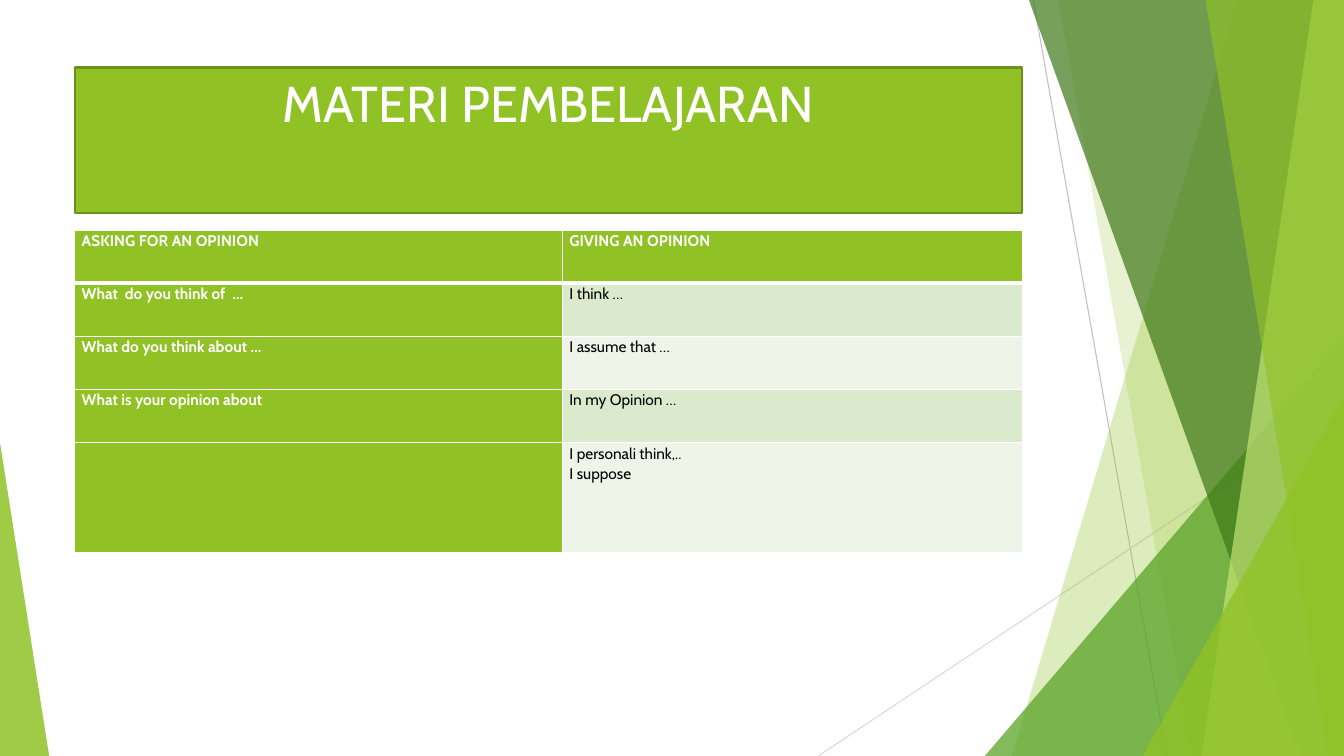
from lxml import etree
from pptx import Presentation
from pptx.dml.color import RGBColor
from pptx.enum.shapes import MSO_CONNECTOR, MSO_SHAPE
from pptx.enum.text import MSO_ANCHOR, PP_ALIGN
from pptx.oxml.ns import qn
from pptx.util import Cm, Pt

STRAIGHT = MSO_CONNECTOR.STRAIGHT
TRIANGLE = MSO_SHAPE.ISOSCELES_TRIANGLE
TOP = MSO_ANCHOR.TOP
CENTER = PP_ALIGN.CENTER

SLIDE_W, SLIDE_H = 33.87, 19.05
FONT = "Cabin"
GREEN, WHITE, BLACK = "90C226", "FFFFFF", "000000"
ROW_TINTS = ("DBE9CD", "EEF4E8")

OPINIONS = [
    (["ASKING FOR AN OPINION"], ["GIVING AN OPINION"]),
    (["What  do you think of  …"], ["I think …"]),
    (["What do you think about …"], ["I assume that …"]),
    (["What is your opinion about"], ["In my Opinion …"]),
    ([], ["I personali think,..", "I suppose"]),
]


def rgb(color):
    return RGBColor.from_string(color)


def add_run(paragraph, text, size, color, bold=False):
    run = paragraph.add_run()
    run.text = text
    run.font.name = FONT
    run.font.size = Pt(size)
    run.font.bold = bold
    run.font.color.rgb = rgb(color)


def paint(shape, color, opacity):
    shape.shadow.inherit = False
    shape.line.fill.background()
    shape.fill.solid()
    shape.fill.fore_color.rgb = rgb(color)
    srgb = shape.fill._xPr.find(qn("a:solidFill"))[0]
    etree.SubElement(srgb, qn("a:alpha"), val=str(opacity * 1000))


def add_thin_line(slide, start, end, color):
    line = slide.shapes.add_connector(STRAIGHT, *map(Cm, start + end))
    line.line.color.rgb = rgb(color)
    line.line.width = Pt(0.75)
    etree.SubElement(line._element.spPr, qn("a:effectLst"))


def add_triangle(slide, left, top, width, height, apex, color, opacity):
    triangle = slide.shapes.add_shape(
        TRIANGLE, Cm(left), Cm(top), Cm(width), Cm(height))
    triangle.adjustments[0] = apex
    paint(triangle, color, opacity)


def add_band(slide, right, bottom, top_width, bottom_width, color, opacity):
    """Fill from a slanted left edge to the right edge, over the full height."""
    corners = [(right - top_width, 0), (right, 0),
               (right, bottom), (right - bottom_width, bottom)]
    points = [(Cm(x), Cm(y)) for x, y in corners]
    builder = slide.shapes.build_freeform(*points[0])
    builder.add_line_segments(points[1:], close=True)
    paint(builder.convert_to_shape(), color, opacity)


def add_facets(slide, right, bottom):
    # Thin crossing lines
    add_thin_line(slide, (right - 7.83, 0), (right - 4.46, bottom), "BFBFBF")
    add_thin_line(slide, (right, bottom - 8.81), (right - 13.25, bottom), "D9D9D9")

    # Translucent bands and corner triangles, back to front
    add_band(slide, right, bottom, 2.68, 8.37, GREEN, 30)
    add_band(slide, right, bottom, 7.2, 3.82, GREEN, 20)
    add_triangle(slide, right - 9.05, bottom - 10.59, 9.05, 10.59, 1, "54A021", 72)
    add_band(slide, right, bottom, 7.94, 1.08, "3F7819", 70)
    add_band(slide, right, bottom, 0.77, 3.59, "C0E474", 70)
    add_band(slide, right, bottom, 3.49, 0.39, GREEN, 65)
    add_triangle(slide, right - 5.07, bottom - 9.07, 5.07, 9.07, 1, GREEN, 80)

    # Sliver at the left edge
    add_triangle(slide, 0, bottom - 7.9, 1.24, 7.9, 0, GREEN, 85)


def add_title(slide, left, top, width, height):
    title = slide.shapes.title
    title.left, title.top = Cm(left), Cm(top)
    title.width, title.height = Cm(width), Cm(height)
    title.fill.solid()
    title.fill.fore_color.rgb = rgb(GREEN)
    title.line.color.rgb = rgb("6B901C")
    title.line.width = Pt(1.5)
    frame = title.text_frame
    frame.word_wrap = True
    frame.vertical_anchor = TOP
    frame.paragraphs[0].alignment = CENTER
    add_run(frame.paragraphs[0], "MATERI PEMBELAJARAN", 36, WHITE)


def add_borders(cell, top_width, bottom_width):
    properties = cell._tc.get_or_add_tcPr()
    for side, width in zip("LRTB", (1, 1, top_width, bottom_width)):
        border = etree.SubElement(properties, qn("a:ln" + side), w=str(Pt(width)))
        fill = etree.SubElement(border, qn("a:solidFill"))
        etree.SubElement(fill, qn("a:srgbClr"), val=WHITE)


def fill_cell(cell, lines, background, color, bold):
    cell.fill.solid()
    cell.fill.fore_color.rgb = rgb(background)
    cell.margin_left = cell.margin_right = Cm(0.18)
    cell.margin_top = cell.margin_bottom = 0
    frame = cell.text_frame
    for index, line in enumerate(lines):
        paragraph = frame.add_paragraph() if index else frame.paragraphs[0]
        paragraph.line_spacing = 1.07
        add_run(paragraph, line, 11, color, bold)


def add_opinion_table(slide, left, top, width, height):
    table = slide.shapes.add_table(
        len(OPINIONS), 2, Cm(left), Cm(top), Cm(width), Cm(height)).table
    asking_width, row_height = 12.29, 1.34
    table.columns[0].width = Cm(asking_width)
    table.columns[1].width = Cm(width - asking_width)
    last = len(OPINIONS) - 1

    for r, phrases in enumerate(OPINIONS):
        table.rows[r].height = Cm(height - last * row_height if r == last else row_height)
        for c, lines in enumerate(phrases):
            cell = table.cell(r, c)
            add_borders(cell, 3 if r == 1 else 1, 3 if r == 0 else 1)
            if r == 0 or c == 0:
                fill_cell(cell, lines, GREEN, WHITE, True)
            else:
                fill_cell(cell, lines, ROW_TINTS[(r - 1) % 2], BLACK, False)


def main():
    deck = Presentation()
    deck.slide_width, deck.slide_height = Cm(SLIDE_W), Cm(SLIDE_H)
    slide = deck.slides.add_slide(deck.slide_layouts[5])
    add_facets(slide, SLIDE_W, SLIDE_H)
    add_title(slide, 1.88, 1.7, 23.88, 3.66)
    add_opinion_table(slide, 1.88, 5.8, 23.88, 8.12)
    deck.save("out.pptx")


if __name__ == "__main__":
    main()
